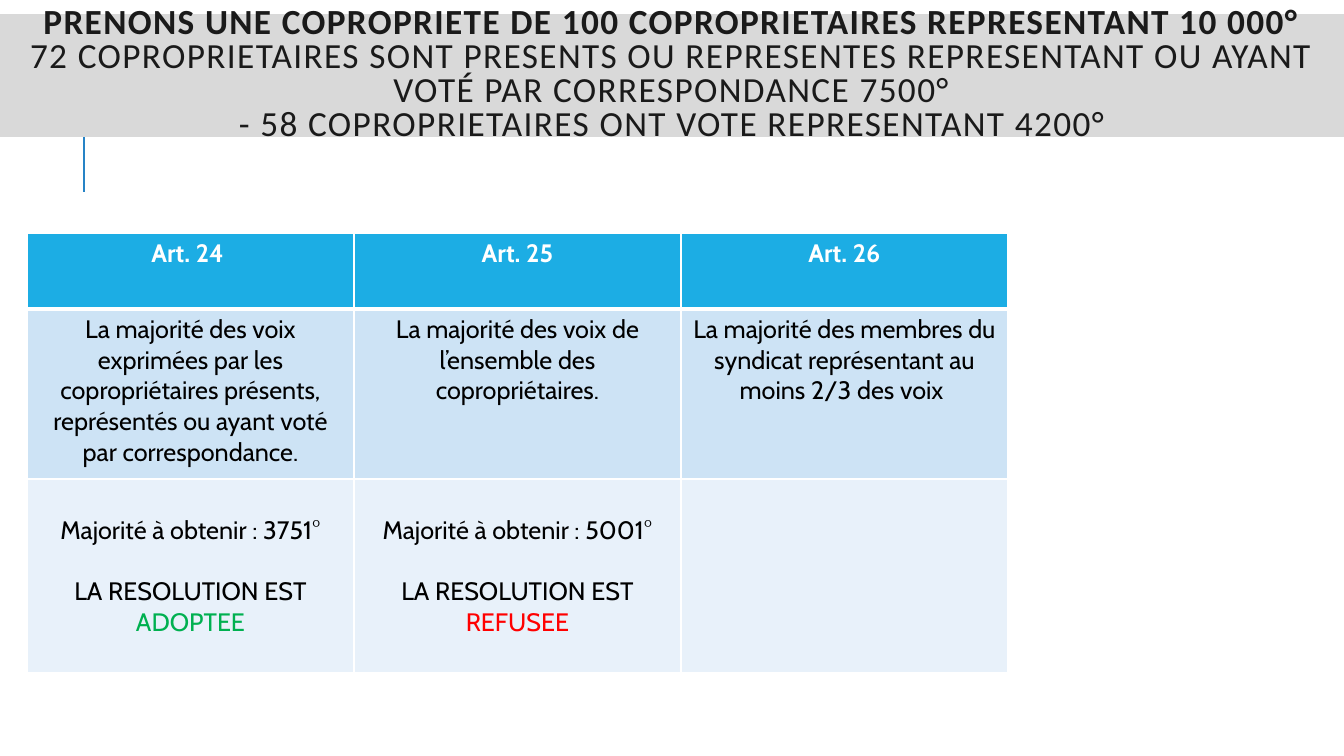
from copy import deepcopy
from dataclasses import dataclass

from lxml.etree import SubElement
from pptx import Presentation
from pptx.dml.color import RGBColor
from pptx.enum.shapes import MSO_CONNECTOR
from pptx.enum.text import MSO_ANCHOR, MSO_AUTO_SIZE, PP_ALIGN
from pptx.oxml.ns import qn
from pptx.util import Emu, Pt

COLORS = {
    "white": "FFFFFF",
    "black": "000000",
    "ink": "1A1A1A",
    "banner": "D9D9D9",
    "rule": "2683C6",
    "header": "1CADE4",
    "definition": "CDE3F5",
    "result": "E8F1FA",
    "adopted": "00B050",
    "refused": "FF0000",
}
COLUMN_WIDTH = 327
CELL_MARGIN = 5
LINE_HEIGHT = 31
LINE_HEIGHT_POINTS = 22


@dataclass(frozen=True)
class Line:
    text: str
    color: str = "black"
    bold: bool = False
    after: int = 0


@dataclass(frozen=True)
class Row:
    height: int
    fill: str
    top_margin: int
    top_border: int
    bottom_border: int
    cells: list[list[Line]]


def px(value: int) -> Emu:
    return Emu(round(value * 914400 / 100.8))


def rgb(name: str) -> RGBColor:
    return RGBColor.from_string(COLORS[name])


def result(threshold: str, verdict: str, color: str) -> list[Line]:
    return [
        Line(f"Majorité à obtenir : {threshold}", after=LINE_HEIGHT_POINTS),
        Line("LA RESOLUTION EST"),
        Line(verdict, color),
    ]


ROWS = [
    Row(76, "header", CELL_MARGIN, 1, 3, [
        [Line(text, "white", True)] for text in ("Art. 24 ", "Art. 25", "Art. 26")
    ]),
    Row(170, "definition", CELL_MARGIN, 3, 1, [
        [Line("La majorité des voix exprimées par les copropriétaires présents, "
              "représentés ou ayant voté par correspondance.")],
        [Line("La majorité des voix de l’ensemble des copropriétaires.")],
        [Line("La majorité des membres du syndicat représentant au moins 2/3 des voix ")],
    ]),
    Row(194, "result", CELL_MARGIN + LINE_HEIGHT, 1, 1, [
        result("3751°", "ADOPTEE", "adopted"),
        result("5001°", "REFUSEE", "refused"),
        [],
    ]),
]


def write(para, text: str, *, font: str, size: float, color: str,
          bold: bool = False, spacing: int = 0) -> None:
    for index, part in enumerate(text.split("\n")):
        if index:
            para.add_line_break()
            line_break = para._p.findall(qn("a:br"))[-1]
            line_break.append(deepcopy(span.font._element))
        if not part:
            continue
        span = para.add_run()
        span.text = part
        span.font.name = font
        span.font.size = Pt(size)
        span.font.bold = bold
        span.font.color.rgb = rgb(color)
        if spacing:
            span.font._element.set("spc", str(spacing * 100))


def set_borders(cell, row: Row) -> None:
    properties = cell._tc.get_or_add_tcPr()
    widths = {"L": 1, "R": 1, "T": row.top_border, "B": row.bottom_border}
    for side, width in widths.items():
        border = SubElement(properties, qn(f"a:ln{side}"), w=str(Pt(width)))
        fill = SubElement(border, qn("a:solidFill"))
        SubElement(fill, qn("a:srgbClr"), val=COLORS["white"])


def draw_rule(page) -> None:
    rule = page.shapes.add_connector(
        MSO_CONNECTOR.STRAIGHT, px(84), px(192), px(84), px(91))
    rule.line.color.rgb = rgb("rule")
    rule.line.width = Pt(1.5)
    SubElement(rule._element.spPr, qn("a:effectLst"))


def draw_table(page) -> None:
    columns = len(ROWS[0].cells)
    height = sum(row.height for row in ROWS)
    table = page.shapes.add_table(
        len(ROWS), columns, px(27), px(233),
        px(columns * COLUMN_WIDTH), px(height)).table
    for column in table.columns:
        column.width = px(COLUMN_WIDTH)
    for row_index, row in enumerate(ROWS):
        table.rows[row_index].height = px(row.height)
        for column_index, lines in enumerate(row.cells):
            cell = table.cell(row_index, column_index)
            set_borders(cell, row)
            cell.fill.solid()
            cell.fill.fore_color.rgb = rgb(row.fill)
            cell.margin_top = px(row.top_margin)
            for line_index, line in enumerate(lines):
                frame = cell.text_frame
                para = frame.add_paragraph() if line_index else frame.paragraphs[0]
                para.alignment = PP_ALIGN.CENTER
                para.space_after = Pt(line.after)
                write(para, line.text, font="Cabin", size=18,
                      color=line.color, bold=line.bold)


def draw_title(page) -> None:
    title = page.shapes.title
    title.left, title.top, title.width, title.height = px(0), px(14), px(1344), px(123)
    title.fill.solid()
    title.fill.fore_color.rgb = rgb("banner")
    frame = title.text_frame
    frame.word_wrap = True
    frame.auto_size = MSO_AUTO_SIZE.NONE
    frame.vertical_anchor = MSO_ANCHOR.MIDDLE
    para = frame.paragraphs[0]
    para.alignment = PP_ALIGN.CENTER
    para.line_spacing = 0.8
    style = {"font": "Calibri", "size": 25.2, "color": "ink", "spacing": 1}
    write(para, "PRENONS UNE COPROPRIETE DE 100 COPROPRIETAIRES "
                "REPRESENTANT 10 000°\n", bold=True, **style)
    write(para, "72 COPROPRIETAIRES SONT PRESENTS OU REPRESENTES REPRESENTANT "
                "OU AYANT VOTÉ PAR CORRESPONDANCE 7500°\n"
                "- 58 COPROPRIETAIRES ONT VOTE REPRESENTANT 4200°", **style)
    title.element.getparent().append(title.element)


def main() -> None:
    deck = Presentation()
    deck.slide_width, deck.slide_height = px(1344), px(756)
    page = deck.slides.add_slide(deck.slide_layouts[5])
    draw_rule(page)
    draw_table(page)
    draw_title(page)
    deck.save("out.pptx")


if __name__ == "__main__":
    main()
